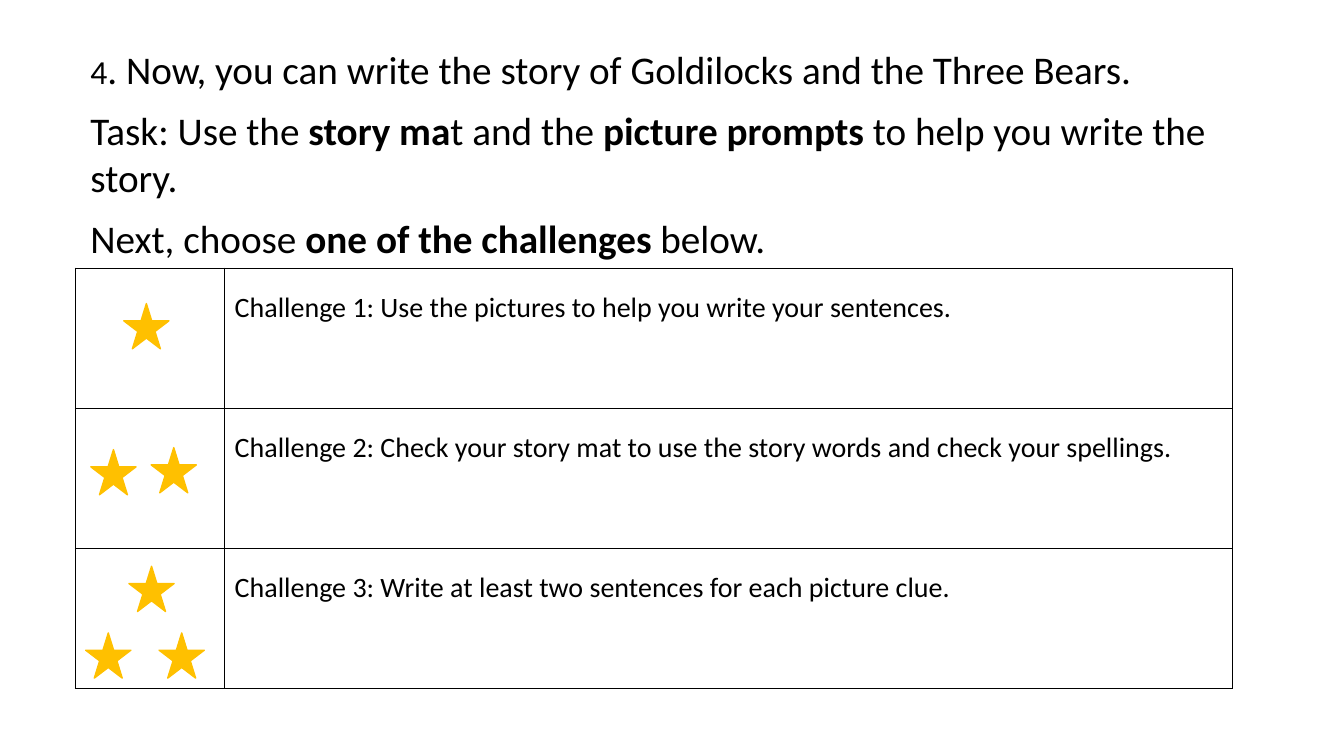
from dataclasses import dataclass

import pptx
import pptx.dml.color
import pptx.enum.shapes
import pptx.oxml
import pptx.oxml.ns
import pptx.util

Cm = pptx.util.Cm
Pt = pptx.util.Pt


@dataclass(frozen=True)
class Theme:
    font: str = "Calibri"
    ink: str = "000000"
    gold: str = "FFC000"
    small: int = 20
    lead: int = 24
    body: int = 28


@dataclass(frozen=True)
class Task:
    text: str
    stars: tuple[tuple[float, float], ...]  # left and top, cm


@dataclass(frozen=True)
class Part:
    text: str
    bold: bool = False
    size: int = Theme.body


THEME = Theme()
STAR = 1.14
ROW = 3.53
COLS = (3.76, 25.4)

INTRO = (
    (Part("4", size=THEME.lead),
     Part(". Now, you can write the story of Goldilocks and the Three Bears.")),
    (Part("Task: Use the "), Part("story ma", True), Part("t and the "),
     Part("picture prompts ", True), Part("to help you write the story.")),
    (Part("Next, choose "), Part("one of the challenges ", True), Part("below.")),
)

TASKS = (
    Task("Challenge 1: Use the pictures to help you write your sentences.",
         ((3.12, 7.65),)),
    Task("Challenge 2: Check your story mat to use the story words and check your spellings.",
         ((3.81, 11.28), (2.29, 11.33))),
    Task("Challenge 3: Write at least two sentences for each picture clue.",
         ((4.01, 15.95), (2.16, 15.95), (3.25, 14.27))),
)


def color(code: str) -> pptx.dml.color.RGBColor:
    return pptx.dml.color.RGBColor.from_string(code)


def write(para, text: str, *, size: int, bold: bool = False) -> None:
    run = para.add_run()
    run.text = text
    run.font.name = THEME.font
    run.font.size = Pt(size)
    run.font.bold = bold
    run.font.color.rgb = color(THEME.ink)


def border(cell) -> None:
    """Draw a thin line on each side of a cell that has no fill."""
    props = cell._tc.get_or_add_tcPr()
    for side in ("lnL", "lnR", "lnT", "lnB"):
        props.append(pptx.oxml.parse_xml(
            f'<a:{side} {pptx.oxml.ns.nsdecls("a")} w="12700"><a:solidFill>'
            f'<a:srgbClr val="{THEME.ink}"/></a:solidFill></a:{side}>'))
    cell.fill.background()


def add_grid(slide) -> None:
    frame = slide.shapes.add_table(len(TASKS), len(COLS), Cm(1.9), Cm(6.76),
                                   Cm(sum(COLS)), Cm(ROW * len(TASKS)))
    grid = frame.table
    grid.first_row = grid.horz_banding = False
    for col, width in zip(grid.columns, COLS):
        col.width = Cm(width)
    for row, task in zip(grid.rows, TASKS):
        row.height = Cm(ROW)
        for cell in row.cells:
            border(cell)
        para = row.cells[1].text_frame.paragraphs[0]
        para.line_spacing = 1.5
        write(para, task.text, size=THEME.small)


def add_intro(slide) -> None:
    box = slide.shapes.add_textbox(Cm(2.03), Cm(1.02), Cm(29.92), Cm(6.2))
    frame = box.text_frame
    frame.word_wrap = True
    for i, parts in enumerate(INTRO):
        para = frame.add_paragraph() if i else frame.paragraphs[0]
        if i:
            para.space_before = Pt(10)
        for part in parts:
            write(para, part.text, size=part.size, bold=part.bold)


def add_star(slide, left: float, top: float) -> None:
    star = slide.shapes.add_shape(pptx.enum.shapes.MSO_SHAPE.STAR_5_POINT,
                                  Cm(left), Cm(top), Cm(STAR), Cm(STAR))
    star.shadow.inherit = False
    star.fill.solid()
    star.fill.fore_color.rgb = color(THEME.gold)
    star.line.color.rgb = color(THEME.gold)
    star.line.width = Pt(1)


def main() -> None:
    deck = pptx.Presentation()
    deck.slide_width, deck.slide_height = Cm(33.87), Cm(19.05)
    slide = deck.slides.add_slide(deck.slide_layouts[6])

    # Challenge table
    add_grid(slide)

    # Task text above the table
    add_intro(slide)

    # Stars that mark each level
    for task in TASKS:
        for left, top in task.stars:
            add_star(slide, left, top)

    deck.save("out.pptx")


if __name__ == "__main__":
    main()
